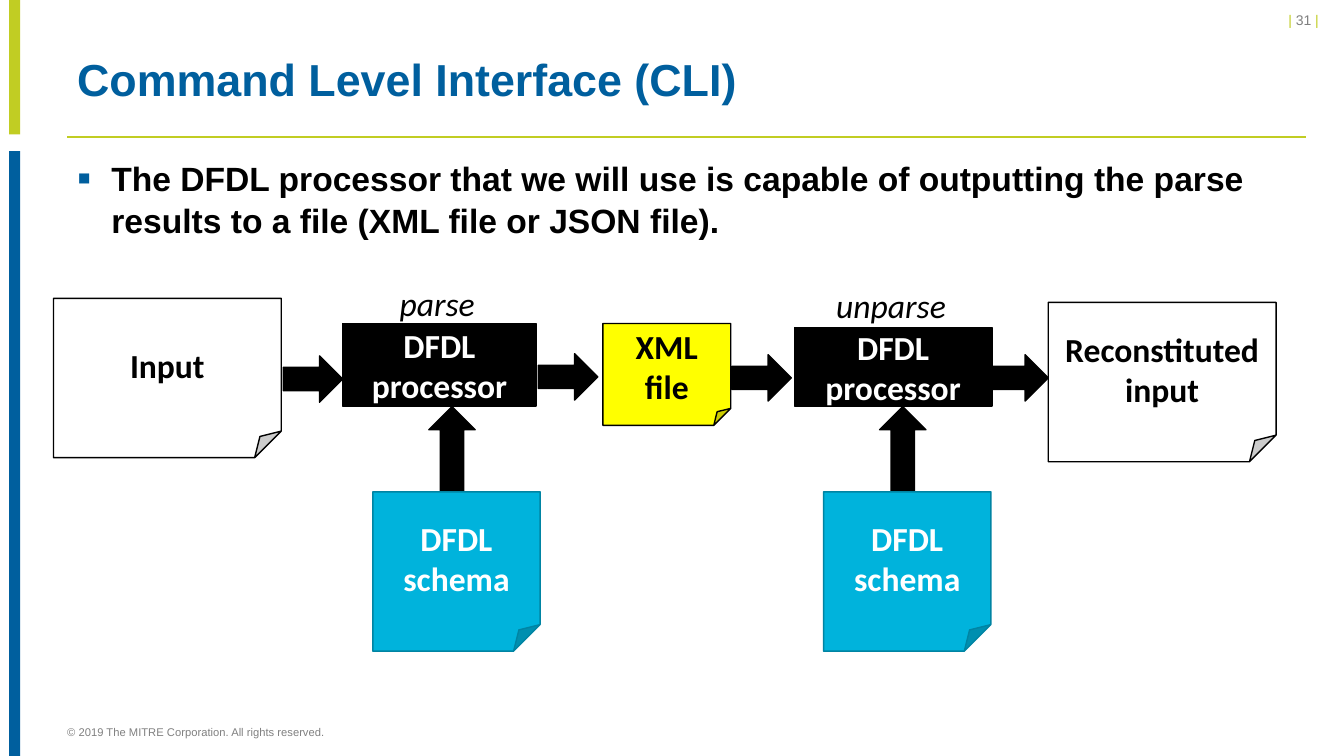
from dataclasses import dataclass

from lxml import etree
from pptx import Presentation
from pptx.dml.color import RGBColor
from pptx.enum.shapes import MSO_CONNECTOR as CONN, MSO_SHAPE as SHAPE
from pptx.enum.text import MSO_ANCHOR as ANCHOR, MSO_AUTO_SIZE as AUTO, PP_ALIGN as ALIGN
from pptx.oxml.ns import qn
from pptx.util import Pt


@dataclass(frozen=True)
class Theme:
    lime: str = "C1CD23"
    blue: str = "005F9E"
    gray: str = "808080"
    black: str = "000000"
    white: str = "FFFFFF"
    yellow: str = "FFFF00"
    cyan: str = "00B3DC"
    cyan_edge: str = "0084A3"
    body_font: str = "Arial"
    flow_font: str = "Calibri"
    title_size: int = 32
    text_size: int = 24
    number_size: int = 10
    footer_size: int = 8


T = Theme()
ARROW_LENGTH, ARROW_WIDTH = 42.5, 33.1


def rgb(color):
    return RGBColor.from_string(color)


def add_run(p, text, size, color, font=T.body_font, bold=False, italic=False):
    r = p.add_run()
    r.text = text
    r.font.size, r.font.name = Pt(size), font
    r.font.bold, r.font.italic = bold, italic
    r.font.color.rgb = rgb(color)


def add_text_box(slide, box, anchor=ANCHOR.TOP, wrap=True):
    tf = slide.shapes.add_textbox(*map(Pt, box)).text_frame
    tf.word_wrap = wrap
    tf.auto_size = AUTO.NONE
    tf.vertical_anchor = anchor
    return tf


def add_block(slide, kind, box, fill, edge=None, lines=(), color=T.black):
    sp = slide.shapes.add_shape(kind, *map(Pt, box))
    sp.shadow.inherit = False
    sp.fill.solid()
    sp.fill.fore_color.rgb = rgb(fill)
    if edge:
        sp.line.color.rgb = rgb(edge)
        sp.line.width = Pt(1)
    else:
        sp.line.fill.background()
    tf = sp.text_frame
    tf.word_wrap = True
    tf.vertical_anchor = ANCHOR.MIDDLE
    for i, line in enumerate(lines):
        p = tf.add_paragraph() if i else tf.paragraphs[0]
        p.alignment = ALIGN.CENTER
        add_run(p, line, T.text_size, color, T.flow_font, bold=True)
    return sp


def add_arrow(slide, x, y, length=ARROW_LENGTH):
    return add_block(slide, SHAPE.RIGHT_ARROW, (x, y, length, ARROW_WIDTH), T.black, T.black)


# Side bars, title rule, page number and copyright line
def add_frame(slide, box):
    x, y, w, h = box
    add_block(slide, SHAPE.RECTANGLE, (x + 6.5, y, 7.9, 96), T.lime)
    add_block(slide, SHAPE.RECTANGLE, (x + 6.5, y + 108, 7.9, h - 108), T.blue)

    rule = slide.shapes.add_connector(
        CONN.STRAIGHT, Pt(x + 48), Pt(y + 97.9), Pt(x + w - 27), Pt(y + 97.9))
    rule.line.color.rgb = rgb(T.lime)
    rule.line.width = Pt(1)
    etree.SubElement(rule._element.spPr, qn("a:effectLst"))

    p = add_text_box(slide, (x + w - 176.6, y + 5, 168.5, 19.4)).paragraphs[0]
    p.alignment = ALIGN.RIGHT
    p.space_after = Pt(6)
    for text, color in (("| ", T.lime), ("31 ", T.gray), ("| ", T.lime)):
        add_run(p, text, T.number_size, color)

    tf = add_text_box(slide, (x + 48, y + h - 26.6, 593.3, 18.7), ANCHOR.MIDDLE)
    tf.margin_left = tf.margin_right = tf.margin_top = tf.margin_bottom = 0
    add_run(tf.paragraphs[0], "© 2019 The MITRE Corporation. All rights reserved.",
            T.footer_size, T.gray)


def add_title(slide, box, text):
    p = add_text_box(slide, box, ANCHOR.MIDDLE).paragraphs[0]
    p.line_spacing = 0.9
    add_run(p, text, T.title_size, T.blue, bold=True)


def add_bullet(slide, box, text):
    p = add_text_box(slide, box).paragraphs[0]
    p.line_spacing = Pt(30)
    p.space_after = Pt(8)
    pPr = p._p.get_or_add_pPr()
    pPr.set("marL", str(Pt(24.5)))
    pPr.set("indent", str(-Pt(24.5)))
    bullet_color = etree.SubElement(pPr, qn("a:buClr"))
    etree.SubElement(bullet_color, qn("a:srgbClr"), val=T.blue)
    etree.SubElement(pPr, qn("a:buSzPct"), val="120000")
    etree.SubElement(pPr, qn("a:buFont"), typeface=T.body_font)
    etree.SubElement(pPr, qn("a:buChar"), char="▪")
    add_run(p, text, T.text_size, T.black, bold=True)


# A processor with its action above and its schema feeding in from below
def add_stage(slide, box, action, label_y, label_w, arrow_shift):
    x, y, w, h = box
    bottom, center = y + h, x + w / 2
    arrow_x, length = center + arrow_shift, 61.2

    arrow = add_arrow(slide, arrow_x - length / 2,
                      bottom + (length - ARROW_WIDTH) / 2 + 0.3, length)
    arrow.rotation = 270
    schema_w = 119.5
    add_block(slide, SHAPE.FOLDED_CORNER,
              (arrow_x + 3.2 - schema_w / 2, bottom + length, schema_w, 113.8),
              T.cyan, T.cyan_edge, ("DFDL", "schema"), T.white)
    add_block(slide, SHAPE.RECTANGLE, box, T.black, T.black, ("DFDL processor",), T.white)
    tf = add_text_box(slide, (center - 1 - label_w / 2, label_y, label_w, 36), wrap=False)
    add_run(tf.paragraphs[0], action, T.text_size, T.black, T.flow_font, italic=True)


# Input -> parse -> XML -> unparse -> reconstituted input
def add_flow(slide, box):
    x, y, w, h = box
    doc_w, doc_h = 162.7, 113.8
    documents = (
        (0, 14.4, doc_w, doc_h, T.white, ("Input",)),
        (w - doc_w, 17.3, doc_w, doc_h, T.white, ("Reconstituted", "input")),
        (392.4, 32.4, 91.4, 72.7, T.yellow, ("XML", "file")),
    )
    for dx, dy, dw, dh, fill, lines in documents:
        add_block(slide, SHAPE.FOLDED_CORNER, (x + dx, y + dy, dw, dh), fill, T.black, lines)
    for dx, dy in ((164.1, 55.5), (346.3, 54), (484.5, 54.7), (668.1, 54.7)):
        add_arrow(slide, x + dx, y + dy)
    add_stage(slide, (x + 206.6, y + 32.4, 138.2, 59), "parse", y, 69.1, 9)
    add_stage(slide, (x + 529.2, y + 35.3, 141.1, 56.1), "unparse", y + 1.5, 93.6, 6.9)


def main():
    prs = Presentation()
    prs.slide_width, prs.slide_height = Pt(960), Pt(540)
    slide = prs.slides.add_slide(prs.slide_layouts[6])
    add_frame(slide, (0, 0, 960, 540))
    add_title(slide, (48, 28.8, 885, 59), "Command Level Interface (CLI)")
    add_bullet(slide, (48, 108, 885, 72.7),
               "The DFDL processor that we will use is capable of outputting "
               "the parse results to a file (XML file or JSON file).")
    add_flow(slide, (38.2, 198.7, 873.3, 266.4))
    prs.save("out.pptx")


if __name__ == "__main__":
    main()
